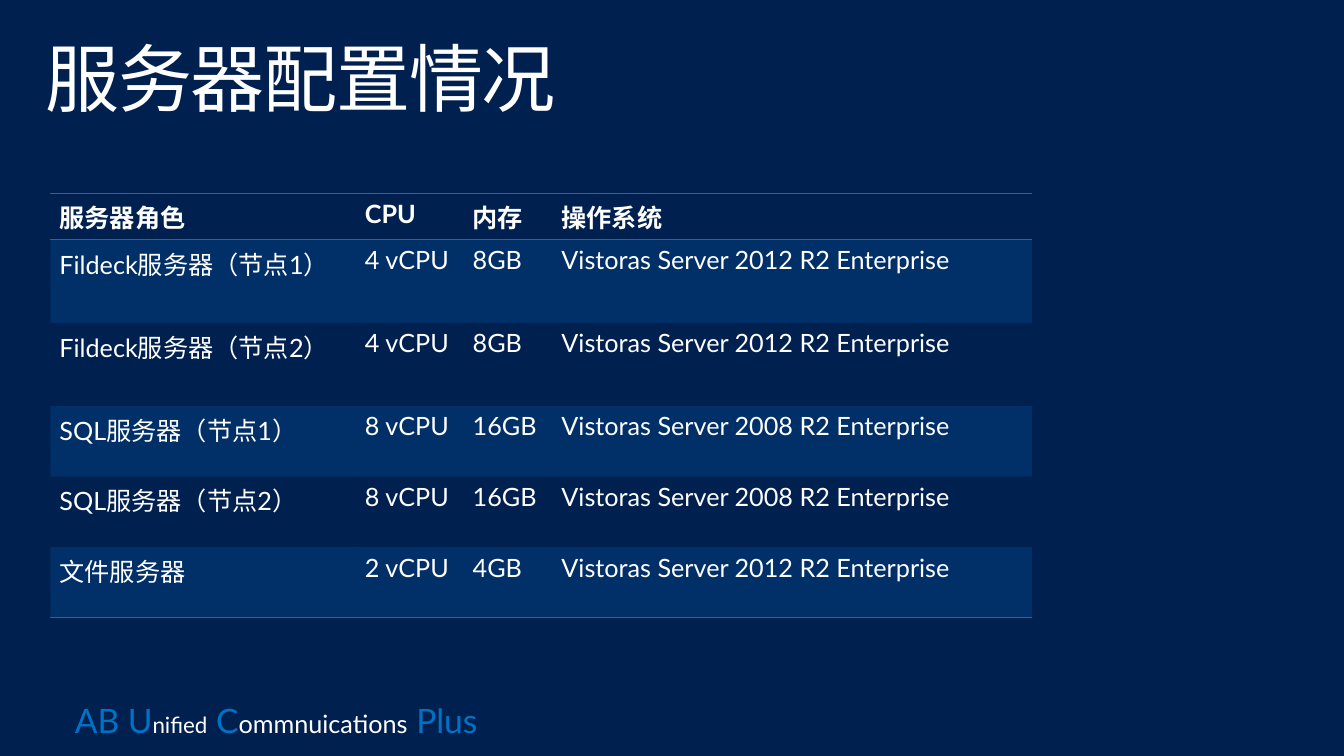
"""Build the server configuration slide."""
import enum

import lxml.etree
import pptx
import pptx.dml.color
import pptx.enum.text
import pptx.oxml.ns
import pptx.util

Pt = pptx.util.Pt
qualified = pptx.oxml.ns.qn


class Theme(enum.Enum):
    FONT = "Lato"
    NAVY = "002050"
    BLUE = "0072C6"
    WHITE = "FFFFFF"
    TITLE_SIZE = 52.9
    BODY_SIZE = 18
    INITIAL_SIZE = 24
    SMALL_SIZE = 16


def add_span(para, text, size, color=Theme.WHITE, bold=False):
    span = para.add_run()
    span.text = text
    span.font.name = Theme.FONT.value
    span.font.size = Pt(size.value)
    span.font.bold = bold
    span.font.color.rgb = pptx.dml.color.RGBColor.from_string(color.value)
    return span


def add_rule(cell, side):
    line = lxml.etree.SubElement(cell._tc.get_or_add_tcPr(), qualified(f"a:{side}"), w=str(Pt(1)))
    fill = lxml.etree.SubElement(line, qualified("a:solidFill"))
    lxml.etree.SubElement(fill, qualified("a:srgbClr"), val=Theme.BLUE.value)


deck = pptx.Presentation()
deck.slide_width, deck.slide_height = Pt(960), Pt(540)
page = deck.slides.add_slide(deck.slide_layouts[5])
page.background.fill.solid()
page.background.fill.fore_color.rgb = pptx.dml.color.RGBColor.from_string(Theme.NAVY.value)

title = page.shapes.title
title.left, title.top, title.width, title.height = Pt(21), Pt(23), Pt(918), Pt(70.6)
footer = page.shapes.add_textbox(Pt(39), Pt(491.8), Pt(326), Pt(49.7))
for box, side_margin, end_margin in ((title, 11.5, 7.2), (footer, 14.4, 11.5)):
    frame = box.text_frame
    frame.word_wrap = True
    frame.auto_size = pptx.enum.text.MSO_AUTO_SIZE.NONE
    frame.vertical_anchor = pptx.enum.text.MSO_ANCHOR.TOP
    frame.margin_left = frame.margin_right = Pt(side_margin)
    frame.margin_top = frame.margin_bottom = Pt(end_margin)
    frame.paragraphs[0].alignment = pptx.enum.text.PP_ALIGN.LEFT
    frame.paragraphs[0].line_spacing = 0.9

heading = add_span(title.text_frame.paragraphs[0], "服务器配置情况", Theme.TITLE_SIZE)
heading.font._element.set("spc", "-100")

for text, size, color in (
    ("AB U", Theme.INITIAL_SIZE, Theme.BLUE),
    ("nified", Theme.SMALL_SIZE, Theme.WHITE),
    (" ", Theme.INITIAL_SIZE, Theme.WHITE),
    ("C", Theme.INITIAL_SIZE, Theme.BLUE),
    ("ommnuications", Theme.BODY_SIZE, Theme.WHITE),
    (" ", Theme.INITIAL_SIZE, Theme.WHITE),
    ("Plus", Theme.INITIAL_SIZE, Theme.BLUE),
):
    add_span(footer.text_frame.paragraphs[0], text, size, color)

servers = (
    ("服务器角色", "CPU", "内存", "操作系统"),
    ("Fildeck服务器（节点1）", "4 vCPU", "8GB", "Vistoras Server 2012 R2 Enterprise"),
    ("Fildeck服务器（节点2）", "4 vCPU", "8GB", "Vistoras Server 2012 R2 Enterprise"),
    ("SQL服务器（节点1）", "8 vCPU", "16GB", "Vistoras Server 2008 R2 Enterprise"),
    ("SQL服务器（节点2）", "8 vCPU", "16GB", "Vistoras Server 2008 R2 Enterprise"),
    ("文件服务器", "2 vCPU", "4GB", "Vistoras Server 2012 R2 Enterprise"),
)
column_widths = (218.2, 77, 63.4, 342.7)
row_heights = (33.1, 59.4, 59.4, 50.4, 50.4, 50.4)
table = page.shapes.add_table(
    len(servers), len(column_widths), Pt(36), Pt(138), Pt(sum(column_widths)), Pt(sum(row_heights))
).table
table.horz_banding = False
table._tbl.tblPr.find(qualified("a:tableStyleId")).text = "{2D5ABB26-0587-4C30-8999-92F81FD0307C}"
for column, width in zip(table.columns, column_widths):
    column.width = Pt(width)

for index, (row, height, values) in enumerate(zip(table.rows, row_heights, servers)):
    row.height = Pt(height)
    for cell, value in zip(row.cells, values):
        cell.margin_left = cell.margin_right = Pt(6.5)
        cell.margin_top = cell.margin_bottom = Pt(3.6)
        add_span(cell.text_frame.paragraphs[0], value, Theme.BODY_SIZE, bold=index == 0)
        if index == 0:
            add_rule(cell, "lnT")
        if index in (0, len(servers) - 1):
            add_rule(cell, "lnB")
        if index % 2:
            cell.fill.solid()
            cell.fill.fore_color.rgb = pptx.dml.color.RGBColor.from_string(Theme.BLUE.value)
            tint = cell._tc.tcPr.find(f"{qualified('a:solidFill')}/{qualified('a:srgbClr')}")
            lxml.etree.SubElement(tint, qualified("a:alpha"), val="20000")
        else:
            cell.fill.background()

deck.save("out.pptx")
